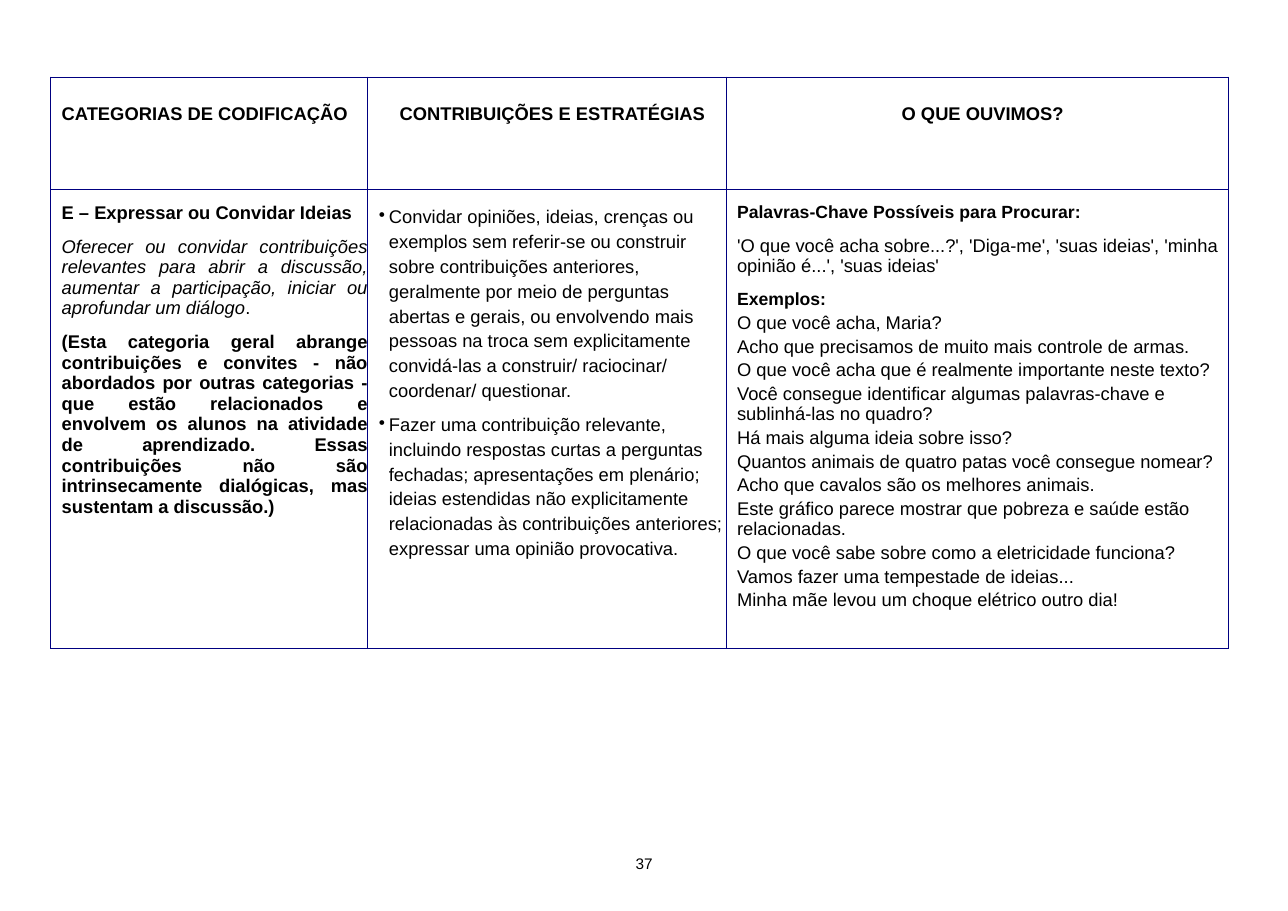
"""Build the slide with the coding table for expressing or inviting ideas."""
from dataclasses import dataclass

import lxml.etree
import pptx
import pptx.dml.color
import pptx.enum.text
import pptx.oxml.ns
import pptx.util

EMU_PER_PX = 9144
ALIGN = pptx.enum.text.PP_ALIGN


@dataclass(frozen=True)
class Theme:
    font: str = "Arial"
    ink: str = "000000"
    border: str = "000080"
    border_width: float = 0.75
    body: float = 12
    label: float = 11.5
    number: float = 10


THEME = Theme()


@dataclass(frozen=True)
class Span:
    text: str
    bold: bool = False
    italic: bool = False
    size: float = THEME.body


@dataclass(frozen=True)
class Para:
    spans: tuple[Span, ...]
    before: float = 0
    align: ALIGN = ALIGN.LEFT
    line: float = 1.0
    bullet: bool = False


@dataclass(frozen=True)
class Content:
    paras: tuple[Para, ...]
    top: int


TABLE_LEFT, TABLE_TOP = 46, 70
COLUMN_WIDTHS = (288, 325, 456)
ROW_HEIGHTS = (102, 417)
CELL_INDENT = 10
BULLET_HANG = 9
HEADER_TOP, BODY_TOP = 24, 12
BLOCK_GAP, BULLET_GAP, EXAMPLE_GAP = 8.7, 5.8, 2

HEADERS = (
    ("CATEGORIAS DE CODIFICAÇÃO", ALIGN.LEFT),
    ("CONTRIBUIÇÕES E ESTRATÉGIAS", ALIGN.CENTER),
    ("O QUE OUVIMOS?", ALIGN.CENTER),
)
CATEGORY = (
    (Span("E – Expressar ou Convidar Ideias", bold=True),),
    (
        Span("Oferecer ou convidar contribuições relevantes para abrir a discussão, "
             "aumentar a participação, iniciar ou aprofundar um diálogo", italic=True),
        Span("."),
    ),
    (Span("(Esta categoria geral abrange contribuições e convites - não abordados por "
          "outras categorias - que estão relacionados e envolvem os alunos na atividade "
          "de aprendizado. Essas contribuições não são intrinsecamente dialógicas, mas "
          "sustentam a discussão.)", bold=True),),
)
STRATEGIES = (
    "Convidar opiniões, ideias, crenças ou exemplos sem referir-se ou construir sobre "
    "contribuições anteriores, geralmente por meio de perguntas abertas e gerais, ou "
    "envolvendo mais pessoas na troca sem explicitamente convidá-las a construir/ "
    "raciocinar/ coordenar/ questionar.",
    "Fazer uma contribuição relevante, incluindo respostas curtas a perguntas fechadas; "
    "apresentações em plenário; ideias estendidas não explicitamente relacionadas às "
    "contribuições anteriores; expressar uma opinião provocativa.",
)
KEYWORDS = (
    Span("Palavras-Chave Possíveis para Procurar:", bold=True, size=THEME.label),
    Span("'O que você acha sobre...?', 'Diga-me', 'suas ideias', 'minha opinião é...', "
         "'suas ideias'"),
    Span("Exemplos:", bold=True, size=THEME.label),
)
EXAMPLES = (
    "O que você acha, Maria?",
    "Acho que precisamos de muito mais controle de armas.",
    "O que você acha que é realmente importante neste texto?",
    "Você consegue identificar algumas palavras-chave e sublinhá-las no quadro?",
    "Há mais alguma ideia sobre isso?",
    "Quantos animais de quatro patas você consegue nomear?",
    "Acho que cavalos são os melhores animais.",
    "Este gráfico parece mostrar que pobreza e saúde estão relacionadas.",
    "O que você sabe sobre como a eletricidade funciona?",
    "Vamos fazer uma tempestade de ideias...",
    "Minha mãe levou um choque elétrico outro dia!",
)


def px(length: int) -> pptx.util.Emu:
    return pptx.util.Emu(length * EMU_PER_PX)


def add_element(parent, tag: str, **attributes: str):
    element = lxml.etree.SubElement(parent, pptx.oxml.ns.qn(tag))
    for name, value in attributes.items():
        element.set(name, value)
    return element


def gap_before(index: int, gap: float) -> float:
    return gap if index else 0


def write_paras(frame, paras: tuple[Para, ...]) -> None:
    for index, item in enumerate(paras):
        para = frame.add_paragraph() if index else frame.paragraphs[0]
        para.alignment = item.align
        para.space_before = pptx.util.Pt(item.before)
        para.line_spacing = item.line
        if item.bullet:
            properties = para._p.get_or_add_pPr()
            properties.set("marL", str(px(BULLET_HANG)))
            properties.set("indent", str(-px(BULLET_HANG)))
            color = add_element(properties, "a:buClr")
            add_element(color, "a:srgbClr", val=THEME.ink)
            add_element(properties, "a:buChar", char="•")
        for piece in item.spans:
            span = para.add_run()
            span.text = piece.text
            span.font.name = THEME.font
            span.font.size = pptx.util.Pt(piece.size)
            span.font.bold = piece.bold
            span.font.italic = piece.italic
            span.font.color.rgb = pptx.dml.color.RGBColor.from_string(THEME.ink)


def fill_cell(cell, content: Content) -> None:
    cell.margin_left, cell.margin_top = px(CELL_INDENT), px(content.top)
    cell.margin_right = cell.margin_bottom = 0
    properties = cell._tc.get_or_add_tcPr()
    width = str(pptx.util.Pt(THEME.border_width))
    for tag in ("a:lnL", "a:lnR", "a:lnT", "a:lnB"):
        fill = add_element(add_element(properties, tag, w=width), "a:solidFill")
        add_element(fill, "a:srgbClr", val=THEME.border)
    cell.fill.background()
    write_paras(cell.text_frame, content.paras)


def table_rows() -> tuple[tuple[Content, ...], ...]:
    header = tuple(
        Content((Para((Span(text, bold=True),), align=align),), HEADER_TOP)
        for text, align in HEADERS)
    category = tuple(
        Para(spans, gap_before(index, BLOCK_GAP), ALIGN.JUSTIFY)
        for index, spans in enumerate(CATEGORY))
    strategies = tuple(
        Para((Span(text),), gap_before(index, BULLET_GAP), line=1.21, bullet=True)
        for index, text in enumerate(STRATEGIES))
    heard = tuple(
        Para((span,), gap_before(index, BLOCK_GAP)) for index, span in enumerate(KEYWORDS))
    heard += tuple(Para((Span(text),), EXAMPLE_GAP) for text in EXAMPLES)
    return header, tuple(Content(paras, BODY_TOP) for paras in (category, strategies, heard))


def add_coding_table(page) -> None:
    table = page.shapes.add_table(
        len(ROW_HEIGHTS), len(COLUMN_WIDTHS), px(TABLE_LEFT), px(TABLE_TOP),
        px(sum(COLUMN_WIDTHS)), px(sum(ROW_HEIGHTS))).table
    table.first_row = table.horz_banding = False
    for column, width in zip(table.columns, COLUMN_WIDTHS):
        column.width = px(width)
    for row, height, contents in zip(table.rows, ROW_HEIGHTS, table_rows()):
        row.height = px(height)
        for cell, content in zip(row.cells, contents):
            fill_cell(cell, content)


def add_page_number(page) -> None:
    box = page.shapes.add_textbox(px(574), px(775), px(21), px(18))
    frame = box.text_frame
    frame.word_wrap = True
    frame.margin_left = px(3)
    frame.margin_top = frame.margin_right = frame.margin_bottom = 0
    write_paras(frame, (Para((Span("37", size=THEME.number),)),))


def main() -> None:
    deck = pptx.Presentation()
    deck.slide_width, deck.slide_height = px(1169), px(827)
    page = deck.slides.add_slide(deck.slide_layouts[6])
    add_page_number(page)
    add_coding_table(page)
    deck.save("out.pptx")


if __name__ == "__main__":
    main()
